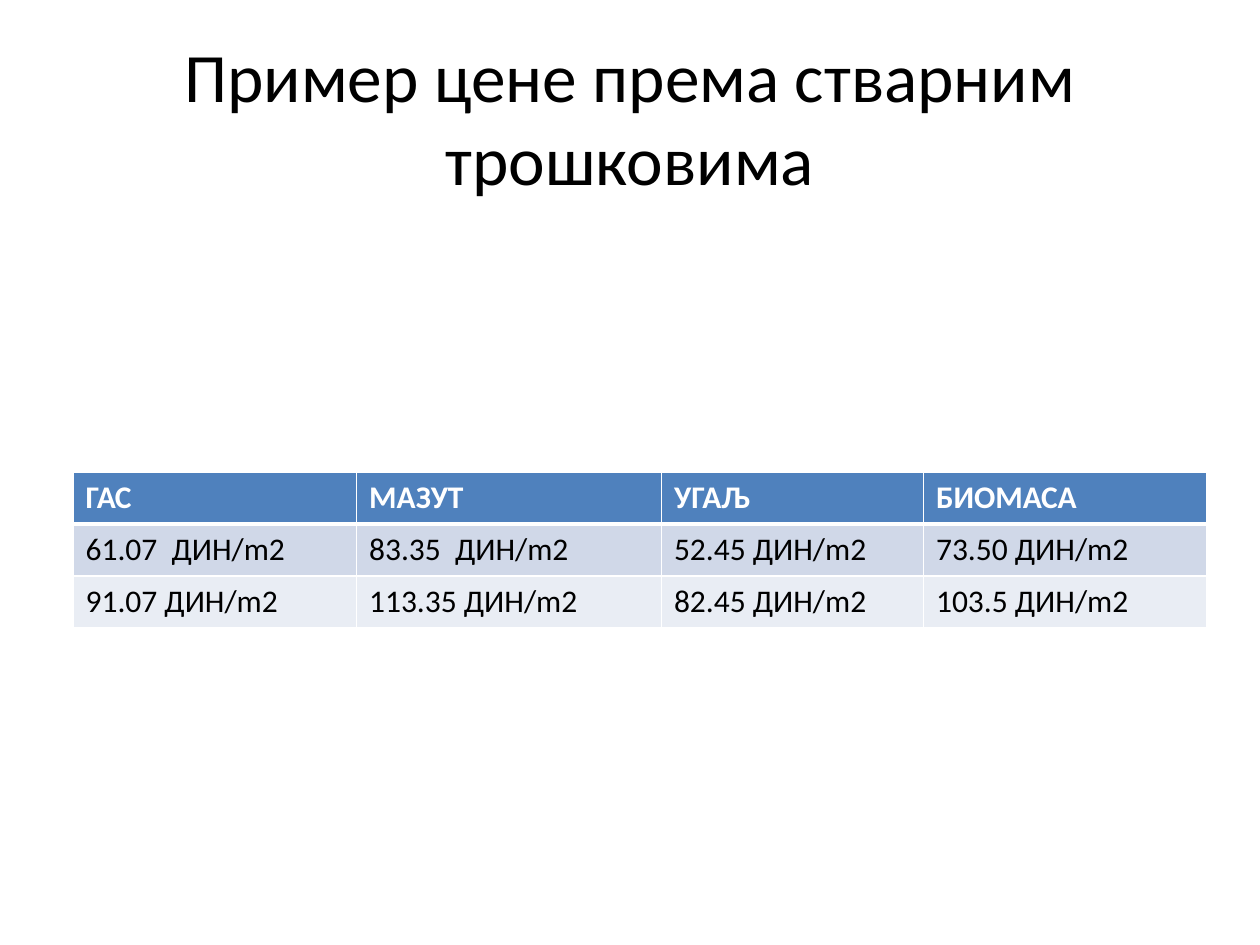
from dataclasses import dataclass

from lxml.etree import SubElement
from pptx import Presentation
from pptx.dml.color import RGBColor as RGB
from pptx.enum.text import MSO_ANCHOR as Anchor, PP_ALIGN as Align
from pptx.oxml.ns import qn
from pptx.util import Inches, Pt


@dataclass(frozen=True)
class Theme:
    font: str = "Calibri"
    title_size: float = 39.6
    body_size: float = 18
    text: str = "000000"
    light: str = "FFFFFF"
    header: str = "4F81BD"
    bands: tuple = ("D0D8E8", "E9EDF4")
    grid_line: float = 1
    header_line: float = 3


class SlideBuilder:
    def __init__(self, slide, theme):
        self.s = slide
        self.theme = theme

    def add_text(self, tf, text, size, color, bold=False, align=Align.LEFT):
        p = tf.paragraphs[0]
        p.alignment = align
        r = p.add_run()
        r.text = text
        style = {"name": self.theme.font, "size": Pt(size), "bold": bold}
        for key, value in style.items():
            setattr(r.font, key, value)
        r.font.color.rgb = RGB.from_string(color)

    def title(self, text, x, y, w, h):
        sp = self.s.shapes.add_textbox(Inches(x), Inches(y), Inches(w), Inches(h))
        tf = sp.text_frame
        tf.word_wrap = True
        tf.vertical_anchor = Anchor.MIDDLE
        self.add_text(tf, text, self.theme.title_size, self.theme.text, align=Align.CENTER)

    def borders(self, cell, widths):
        tc_pr = cell._tc.get_or_add_tcPr()
        for side, width in widths.items():
            ln = SubElement(tc_pr, qn(f"a:ln{side}"), w=str(Pt(width)))
            fill = SubElement(ln, qn("a:solidFill"))
            SubElement(fill, qn("a:srgbClr"), val=self.theme.light)

    def table(self, rows, x, y, col_widths, row_height):
        t = self.theme
        table = self.s.shapes.add_table(
            len(rows), len(col_widths), Inches(x), Inches(y),
            Inches(sum(col_widths)), Inches(row_height * len(rows))).table
        for col, width in zip(table.columns, col_widths):
            col.width = Inches(width)
        for i, values in enumerate(rows):
            table.rows[i].height = Inches(row_height)
            is_header = i == 0
            fill = t.header if is_header else t.bands[(i - 1) % len(t.bands)]
            widths = dict.fromkeys("LRTB", t.grid_line)
            # The heavy rule is shared by the header and the row below it
            if i < 2:
                widths["B" if is_header else "T"] = t.header_line
            for j, value in enumerate(values):
                cell = table.cell(i, j)
                self.borders(cell, widths)
                cell.fill.solid()
                cell.fill.fore_color.rgb = RGB.from_string(fill)
                self.add_text(cell.text_frame, value, t.body_size,
                              t.light if is_header else t.text, bold=is_header)


def main():
    prs = Presentation()
    prs.slide_width, prs.slide_height = Inches(10), Inches(7.5)
    slide = SlideBuilder(prs.slides.add_slide(prs.slide_layouts[6]), Theme())

    # Title
    slide.title("Пример цене према стварним трошковима", 0.5, 0.3, 9, 1.25)

    # Heating prices by fuel
    prices = [
        ["ГАС", "МАЗУТ", "УГАЉ", "БИОМАСА"],
        ["61.07  ДИН/m2", "83.35  ДИН/m2", "52.45 ДИН/m2", "73.50 ДИН/m2"],
        ["91.07 ДИН/m2", "113.35 ДИН/m2", "82.45 ДИН/m2", "103.5 ДИН/m2"],
    ]
    slide.table(prices, 0.58, 3.75, [2.25, 2.42, 2.08, 2.25], 0.41)

    prs.save("out.pptx")


if __name__ == "__main__":
    main()
